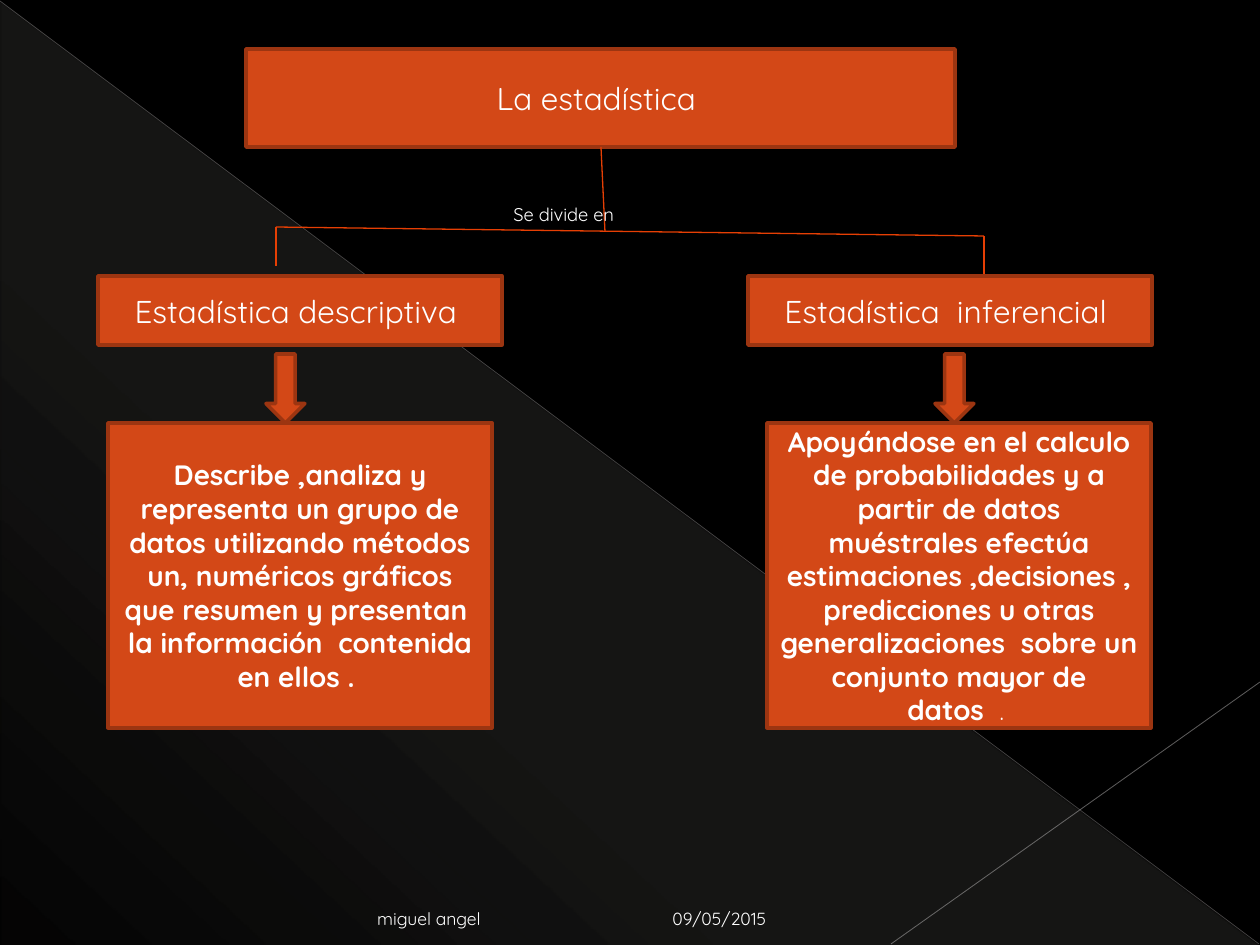
from lxml import etree
from pptx import Presentation
from pptx.dml.color import RGBColor
from pptx.enum.shapes import MSO_CONNECTOR, MSO_SHAPE
from pptx.enum.text import MSO_ANCHOR, MSO_AUTO_SIZE, PP_ALIGN
from pptx.oxml.ns import qn
from pptx.util import Emu, Pt

RECTANGLE = MSO_SHAPE.RECTANGLE
DOWN_ARROW = MSO_SHAPE.DOWN_ARROW
TRIANGLE = MSO_SHAPE.RIGHT_TRIANGLE
STRAIGHT = MSO_CONNECTOR.STRAIGHT
LEFT, CENTER, RIGHT = PP_ALIGN.LEFT, PP_ALIGN.CENTER, PP_ALIGN.RIGHT
TOP, MIDDLE, BOTTOM = MSO_ANCHOR.TOP, MSO_ANCHOR.MIDDLE, MSO_ANCHOR.BOTTOM
NO_AUTOFIT = MSO_AUTO_SIZE.NONE

EMU_PER_PX = 914400 / 126
FONT = "Quicksand"
COLORS = {
    "background": "000000",
    "box": "D34817",
    "border": "9C3511",
    "branch": "E63F04",
    "text": "FFFFFF",
    "veil": "E9E5DC",
    "diagonal": "C1BEBE",
    "corner": "C7C5C5",
}


def px(*lengths):
    return [Emu(round(length * EMU_PER_PX)) for length in lengths]


def rgb(name):
    return RGBColor.from_string(COLORS[name])


def add_alpha(color_element, percent):
    etree.SubElement(color_element, qn("a:alpha"), val=str(percent * 1000))


def write_text(paragraph, text, size=18, bold=False, align=CENTER):
    paragraph.alignment = align
    run = paragraph.add_run()
    run.text = text
    run.font.name = FONT
    run.font.size = Pt(size)
    run.font.bold = bold
    run.font.color.rgb = rgb("text")


class SlideBuilder:
    def __init__(self, presentation):
        self.slide = presentation.slides.add_slide(presentation.slide_layouts[5])
        self.shapes = self.slide.shapes
        background = self.slide.background.fill
        background.solid()
        background.fore_color.rgb = rgb("background")

    def paint(self, shape):
        shape.fill.solid()
        shape.fill.fore_color.rgb = rgb("box")
        shape.line.color.rgb = rgb("border")
        shape.line.width = Pt(2)

    def title(self, text, left, top, width, height):
        title = self.shapes.title
        title.left, title.top, title.width, title.height = px(left, top, width, height)
        self.paint(title)
        frame = title.text_frame
        frame.auto_size = NO_AUTOFIT
        frame.vertical_anchor = MIDDLE
        write_text(frame.paragraphs[0], text)

    def block(self, kind, left, top, width, height):
        shape = self.shapes.add_shape(kind, *px(left, top, width, height))
        shape.shadow.inherit = False
        self.paint(shape)
        return shape

    def box(self, runs, left, top, width, height):
        frame = self.block(RECTANGLE, left, top, width, height).text_frame
        frame.word_wrap = True
        frame.vertical_anchor = MIDDLE
        for text, size, bold in runs:
            write_text(frame.paragraphs[0], text, size=size, bold=bold)

    def label(self, text, left, top, width, height, size=10, align=LEFT, anchor=BOTTOM):
        frame = self.shapes.add_textbox(*px(left, top, width, height)).text_frame
        frame.word_wrap = True
        frame.vertical_anchor = anchor
        write_text(frame.paragraphs[0], text, size=size, align=align)

    def line(self, start, end, color="branch", width=0.75, opacity=100):
        line = self.shapes.add_connector(STRAIGHT, *px(*start, *end))
        line.line.color.rgb = rgb(color)
        line.line.width = Pt(width)
        properties = line._element.spPr
        if opacity < 100:
            add_alpha(properties.find(".//" + qn("a:srgbClr")), opacity)
        etree.SubElement(properties, qn("a:effectLst"))

    def veil(self, left, top, width, height, stops, angle):
        triangle = self.block(TRIANGLE, left, top, width, height)
        triangle.line.fill.background()
        triangle.fill.gradient()
        gradient = triangle._element.spPr.find(qn("a:gradFill"))
        stop_list = gradient.find(qn("a:gsLst"))
        for stop in list(stop_list):
            stop_list.remove(stop)
        for position, opacity in stops:
            stop = etree.SubElement(stop_list, qn("a:gs"), pos=str(position * 1000))
            color = etree.SubElement(stop, qn("a:srgbClr"), val=COLORS["veil"])
            add_alpha(color, opacity)
        gradient.find(qn("a:lin")).set("ang", str(angle * 60000))


def main():
    presentation = Presentation()
    presentation.slide_width, presentation.slide_height = px(1260, 945)
    builder = SlideBuilder(presentation)

    builder.veil(1, 2, 1258, 943, [(0, 10), (70, 8), (100, 1)], 133)
    builder.line((0, 1), (1259, 944), "diagonal", 0.39, 35)
    builder.line((1260, 682), (891, 944), "corner", 0.47, 45)

    builder.title("La estadística ", 246, 49, 709, 98)
    builder.line((601, 147), (605, 232))
    builder.label("Se divide en", 501, 197, 207, 35, size=10.5, anchor=TOP)
    builder.line((276, 227), (984, 236))
    builder.line((276, 227), (276, 266))
    builder.line((984, 236), (984, 276))

    descriptive = [(
        "Describe ,analiza y representa un grupo de datos utilizando métodos un, "
        "numéricos gráficos que resumen y presentan  la información  contenida "
        "en ellos . ", 16, True)]
    inferential = [(
        "Apoyándose en el calculo de probabilidades y a partir de datos muéstrales "
        "efectúa estimaciones ,decisiones ,predicciones u otras generalizaciones  "
        "sobre un conjunto mayor de datos  ", 16, True), (". ", 14, False)]
    branches = [
        ("Estadística descriptiva ", 98, 266, 108, descriptive),
        ("Estadística  inferencial ", 748, 935, 767, inferential),
    ]
    for heading, heading_left, arrow_left, detail_left, detail in branches:
        builder.box([(heading, 18, False)], heading_left, 276, 404, 69)
        builder.block(DOWN_ARROW, arrow_left, 354, 39, 69)
        builder.box(detail, detail_left, 423, 384, 305)

    builder.label("09/05/2015", 660, 893, 294, 42)
    builder.label("miguel angel", 63, 893, 430, 42, align=RIGHT)
    presentation.save("out.pptx")


if __name__ == "__main__":
    main()
